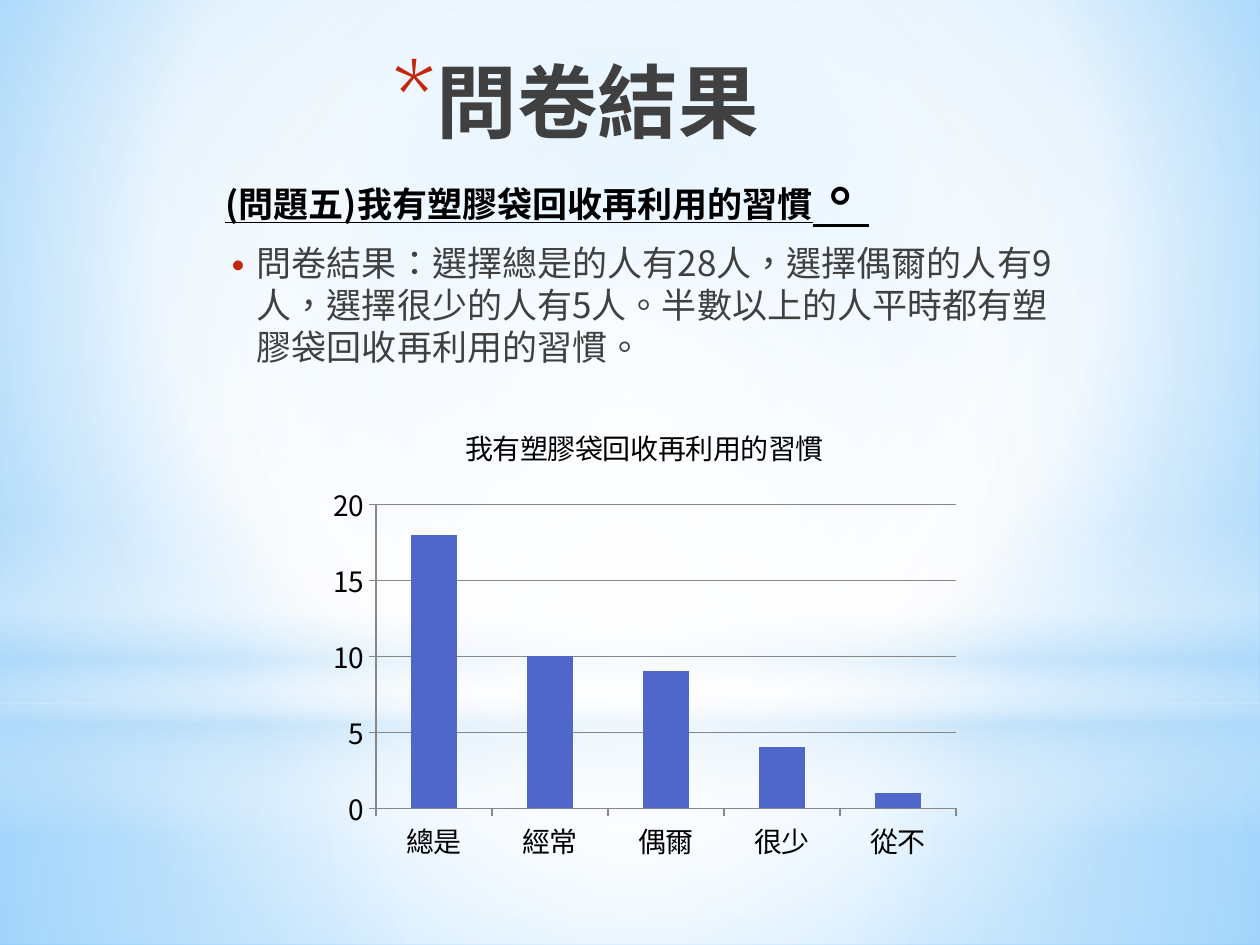
from lxml import etree
from pptx import Presentation
from pptx.chart.data import CategoryChartData
from pptx.dml.color import RGBColor
from pptx.enum.chart import XL_CHART_TYPE, XL_TICK_MARK
from pptx.enum.shapes import MSO_SHAPE
from pptx.enum.text import MSO_ANCHOR, PP_ALIGN
from pptx.oxml.ns import qn
from pptx.util import Inches, Pt

COLUMN = XL_CHART_TYPE.COLUMN_CLUSTERED
OUTSIDE = XL_TICK_MARK.OUTSIDE
RECT, OVAL = MSO_SHAPE.RECTANGLE, MSO_SHAPE.OVAL
TOP = MSO_ANCHOR.TOP
LEFT, CENTER = PP_ALIGN.LEFT, PP_ALIGN.CENTER
FONT = "Noto Sans CJK SC"
CENTRE = (50, 50, 50, 50)
rgb = RGBColor.from_string


def set_gradient(fill, element, stops, focus):
    fill.gradient()
    grad = next(element.iter(qn("a:gradFill")))
    for child in list(grad):
        grad.remove(child)
    stop_list = etree.SubElement(grad, qn("a:gsLst"))
    for pos, color, opacity in stops:
        stop = etree.SubElement(stop_list, qn("a:gs"), pos=str(pos * 1000))
        clr = etree.SubElement(stop, qn("a:srgbClr"), val=color)
        if opacity < 100:
            etree.SubElement(clr, qn("a:alpha"), val=str(opacity * 1000))
    if focus:
        path = etree.SubElement(grad, qn("a:path"), path="circle")
        sides = {k: str(v * 1000) for k, v in zip("ltrb", focus)}
        etree.SubElement(path, qn("a:fillToRect"), **sides)
    else:
        etree.SubElement(grad, qn("a:lin"), ang="5400000", scaled="0")


def add_text(box, runs, color="000000", bold=False, underline=False, align=LEFT,
             before=0, after=0, bullet=None, bullet_size=100, margin=0, indent=0):
    tf = slide.shapes.add_textbox(*[Inches(v) for v in box]).text_frame
    tf.word_wrap = True
    tf.vertical_anchor = TOP
    p = tf.paragraphs[0]
    p.alignment = align
    p.space_before, p.space_after = Pt(before), Pt(after)
    if bullet:
        pPr = p._p.get_or_add_pPr()
        pPr.set("marL", str(Inches(margin)))
        pPr.set("indent", str(Inches(indent)))
        bu_clr = etree.SubElement(pPr, qn("a:buClr"))
        etree.SubElement(bu_clr, qn("a:srgbClr"), val="C3260C")
        etree.SubElement(pPr, qn("a:buSzPct"), val=str(bullet_size * 1000))
        etree.SubElement(pPr, qn("a:buFont"), typeface="Cabin")
        etree.SubElement(pPr, qn("a:buChar"), char=bullet)
    for text, size in runs:
        r = p.add_run()
        r.text = text
        r.font.size, r.font.name = Pt(size), FONT
        r.font.bold, r.font.underline = bold, underline
        r.font.color.rgb = rgb(color)
        rPr = r._r.get_or_add_rPr()
        rPr.set("lang", "zh-TW")
        etree.SubElement(rPr, qn("a:ea"), typeface=FONT)


prs = Presentation()
prs.slide_width, prs.slide_height = Inches(10), Inches(7.5)
slide = prs.slides.add_slide(prs.slide_layouts[6])

set_gradient(slide.background.fill, slide._element,
             [(0, "9ED5FF", 100), (60, "FFFFFF", 100), (100, "5BB9FF", 100)],
             (20, 10, 20, 60))

layers = [
    (RECT, 5.58, 1.92, CENTRE,
     [(0, "FFFFFF", 91), (37, "FFFFFF", 76), (100, "B4DCFA", 79)]),
    (RECT, 0, 5.58, CENTRE,
     [(0, "FFFFFF", 89), (48, "FFFFFF", 62), (100, "B4DCFA", 79)]),
    (RECT, 4.12, 2.5, None,
     [(0, "FFFFFF", 0), (29, "FFFFFF", 30), (45, "B4DCFA", 40),
      (55, "FFFFFF", 26), (65, "B4DCFA", 60), (100, "FFFFFF", 0)]),
    (OVAL, 1.75, 5.58, CENTRE, [(0, "FFFFFF", 100), (56, "FFFFFF", 0)]),
]
for kind, top, height, focus, stops in layers:
    sp = slide.shapes.add_shape(kind, 0, Inches(top), Inches(10), Inches(height))
    sp.shadow.inherit = False
    sp.line.fill.background()
    set_gradient(sp.fill, sp._element, stops, focus)

add_text((1.54, 0.36, 6.06, 1.25), [("問卷結果", 46)], color="404040", bold=True,
         align=CENTER, bullet="*", bullet_size=128, margin=0.35, indent=-0.35)
add_text((1.69, 1.87, 7, 1.26),
         [("問卷結果：選擇總是的人有28人，選擇偶爾的人有9人，選擇很少的人有5人。"
           "半數以上的人平時都有塑膠袋回收再利用的習慣。", 20)],
         color="404040", before=4, after=3, bullet="•", bullet_size=130,
         margin=0.25, indent=-0.2)
add_text((1.69, 1.23, 6.85, 0.64),
         [("(問題五)我有塑膠袋回收再利用的習慣", 20), ("。", 32)],
         bold=True, underline=True)

topic = "我有塑膠袋回收再利用的習慣"
data = CategoryChartData()
data.categories = ["總是", "經常", "偶爾", "很少", "從不"]
data.add_series(topic, [18, 10, 9, 4, 1])
chart = slide.shapes.add_chart(COLUMN, Inches(2.54), Inches(3.2), Inches(5.15),
                               Inches(3.7), data).chart
chart.font.size, chart.font.name = Pt(10), "Cabin"
chart.font.color.rgb = rgb("000000")
chart.has_legend = False
chart.has_title = True
chart.chart_title.include_in_layout = False
p = chart.chart_title.text_frame.paragraphs[0]
r = p.add_run()
r.text = topic
r.font.size, r.font.name, r.font.bold = Pt(16), FONT, False
r.font.color.rgb = rgb("000000")
etree.SubElement(r._r.get_or_add_rPr(), qn("a:ea"), typeface=FONT)

plot = chart.plots[0]
plot.gap_width = 150
plot.vary_by_categories = False
bars = plot.series[0].format.fill
bars.solid()
bars.fore_color.rgb = rgb("4E67C8")

value_axis = chart.value_axis
value_axis.minimum_scale, value_axis.maximum_scale = 0, 20
value_axis.major_unit = 5
value_axis.has_major_gridlines = True
for axis in (chart.category_axis, value_axis):
    axis.major_tick_mark = OUTSIDE
    font = axis.tick_labels.font
    font.size, font.name = Pt(16), FONT
    font.color.rgb = rgb("000000")
    etree.SubElement(font._element, qn("a:ea"), typeface=FONT)
for line in (chart.category_axis.format.line, value_axis.format.line,
             value_axis.major_gridlines.format.line):
    line.color.rgb = rgb("878787")

prs.save("out.pptx")
